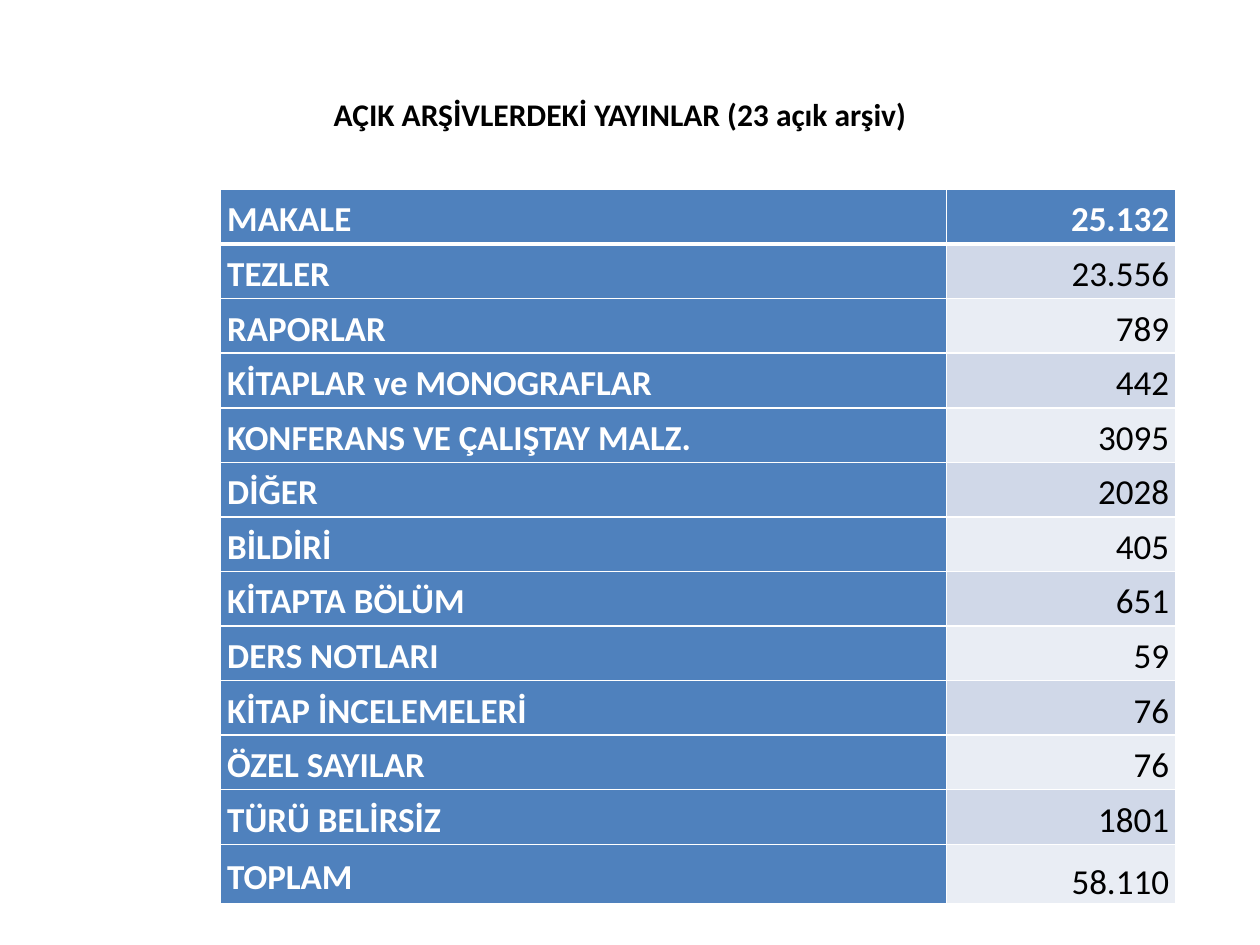
from lxml import etree
from pptx import Presentation
from pptx.dml.color import RGBColor
from pptx.enum.text import MSO_ANCHOR, PP_ALIGN
from pptx.oxml.ns import qn
from pptx.util import Cm, Pt

LEFT, CENTER, RIGHT = PP_ALIGN.LEFT, PP_ALIGN.CENTER, PP_ALIGN.RIGHT
MIDDLE, BOTTOM = MSO_ANCHOR.MIDDLE, MSO_ANCHOR.BOTTOM

# Content
TITLE = "AÇIK ARŞİVLERDEKİ YAYINLAR (23 açık arşiv)"
PUBLICATIONS = [
    ("MAKALE", "25.132"),
    ("TEZLER", "23.556"),
    ("RAPORLAR", "789"),
    ("KİTAPLAR ve MONOGRAFLAR", "442"),
    ("KONFERANS VE ÇALIŞTAY MALZ.", "3095"),
    ("DİĞER", "2028"),
    ("BİLDİRİ", "405"),
    ("KİTAPTA BÖLÜM", "651"),
    ("DERS NOTLARI", "59"),
    ("KİTAP İNCELEMELERİ", "76"),
    ("ÖZEL SAYILAR", "76"),
    ("TÜRÜ BELİRSİZ", "1801"),
    ("TOPLAM", "58.110"),
]
COLORS = {"blue": "4F81BD", "band_dark": "D0D8E8", "band_light": "E9EDF4",
          "white": "FFFFFF", "black": "000000"}
COLUMN_WIDTHS = (Cm(14.63), Cm(4.62))
ROW_HEIGHT, TOTAL_HEIGHT = Cm(1.1), Cm(1.2)
THIN, THICK = Pt(1), Pt(3)


def write(frame, text, size=20, color="black", bold=False, align=LEFT, spacing=1.0):
    paragraph = frame.paragraphs[0]
    paragraph.alignment = align
    paragraph.line_spacing = spacing
    run = paragraph.add_run()
    run.text = text
    run.font.name = "Calibri"
    run.font.size = Pt(size)
    run.font.bold = bold
    run.font.color.rgb = RGBColor.from_string(COLORS[color])


def set_borders(cell, top, bottom):
    """Draw white cell borders; they must come before the fill in tcPr."""
    properties = cell._tc.get_or_add_tcPr()
    widths = {"a:lnL": THIN, "a:lnR": THIN, "a:lnT": top, "a:lnB": bottom}
    for position, (side, width) in enumerate(widths.items()):
        line = etree.Element(qn(side), w=str(int(width)))
        fill = etree.SubElement(line, qn("a:solidFill"))
        etree.SubElement(fill, qn("a:srgbClr"), val=COLORS["white"])
        properties.insert(position, line)


prs = Presentation()
prs.slide_width, prs.slide_height = Cm(25.4), Cm(19.05)
slide = prs.slides.add_slide(prs.slide_layouts[5])

# Title, lifted above the middle of its box by the bottom margin
title = slide.shapes.title
title.left, title.top, title.width, title.height = Cm(1.7), Cm(0.64), Cm(21.6), Cm(4.09)
title.text_frame.vertical_anchor = MIDDLE
title.text_frame.margin_bottom = Cm(0.9)
write(title.text_frame, TITLE, size=18, bold=True, align=CENTER)

# Table of publication counts
last = len(PUBLICATIONS) - 1
table = slide.shapes.add_table(
    len(PUBLICATIONS), 2, Cm(4.45), Cm(3.82),
    sum(COLUMN_WIDTHS), ROW_HEIGHT * last + TOTAL_HEIGHT).table
for column, width in zip(table.columns, COLUMN_WIDTHS):
    column.width = width

for r, publication in enumerate(PUBLICATIONS):
    table.rows[r].height = TOTAL_HEIGHT if r == last else ROW_HEIGHT
    for c, text in enumerate(publication):
        cell = table.cell(r, c)
        heading = r == 0 or c == 0
        band = "band_dark" if r % 2 else "band_light"
        cell.fill.solid()
        cell.fill.fore_color.rgb = RGBColor.from_string(COLORS["blue" if heading else band])
        cell.margin_left = cell.margin_right = Cm(0.13)
        cell.margin_top = cell.margin_bottom = 0
        cell.vertical_anchor = BOTTOM if (r, c) == (last, 1) else MIDDLE
        write(cell.text_frame, text, color="white" if heading else "black",
              bold=heading, align=RIGHT if c else LEFT, spacing=1.15)
        set_borders(cell, top=THICK if r == 1 else THIN, bottom=THICK if r == 0 else THIN)

prs.save("out.pptx")
